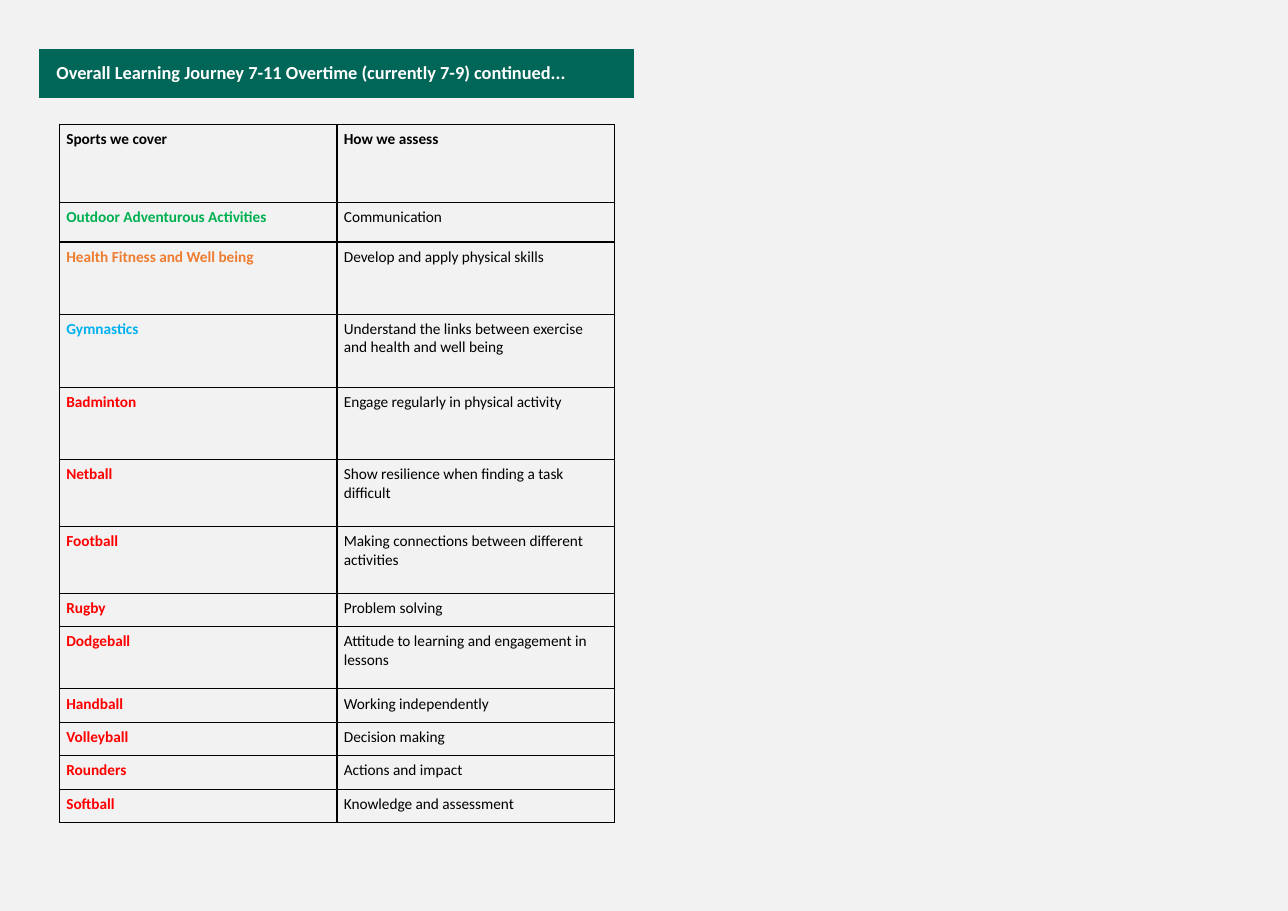
from lxml import etree
from pptx import Presentation
from pptx import util as u
from pptx.dml import color
from pptx.enum import text
from pptx.oxml import ns

GREEN, ORANGE, BLUE, RED, BLACK = "00B050", "ED7D31", "00B0F0", "FF0000", "000000"

ROWS = [
    (1.79, "Sports we cover", BLACK, "How we assess"),
    (0.92, "Outdoor Adventurous Activities ", GREEN, "Communication"),
    (1.66, "Health Fitness and Well being ", ORANGE, "Develop and apply physical skills"),
    (1.7, "Gymnastics", BLUE, "Understand the links between exercise and health and well being"),
    (1.66, "Badminton", RED, "Engage regularly in physical activity"),
    (1.54, "Netball", RED, "Show resilience when finding a task difficult "),
    (1.54, "Football", RED, "Making connections between different activities"),
    (0.77, "Rugby", RED, "Problem solving"),
    (1.43, "Dodgeball", RED, "Attitude to learning and engagement in lessons"),
    (0.77, "Handball", RED, "Working independently"),
    (0.77, "Volleyball", RED, "Decision making"),
    (0.77, "Rounders", RED, "Actions and impact"),
    (0.77, "Softball", RED, "Knowledge and assessment"),
]


def rgb(value):
    return color.RGBColor.from_string(value)


def apply(target, values):
    for name, value in values.items():
        setattr(target, name, value)


class SlideBuilder:
    font = "Calibri"
    border = u.Pt(0.86)

    def __init__(self, deck, background):
        self.page = deck.slides.add_slide(deck.slide_layouts[5])
        fill = self.page.background.fill
        fill.solid()
        fill.fore_color.rgb = rgb(background)

    def add_words(self, para, words, size, hue, bold):
        span = para.add_run()
        span.text = words
        apply(span.font, {"name": self.font, "size": u.Pt(size), "bold": bold})
        span.font.color.rgb = rgb(hue)

    def title(self, words, left, top, width, height, fill):
        box = self.page.shapes.title
        apply(box, {"left": u.Cm(left), "top": u.Cm(top),
                    "width": u.Cm(width), "height": u.Cm(height)})
        box.fill.solid()
        box.fill.fore_color.rgb = rgb(fill)
        apply(box.text_frame, {
            "word_wrap": True, "auto_size": text.MSO_AUTO_SIZE.NONE,
            "vertical_anchor": text.MSO_ANCHOR.MIDDLE,
            "margin_left": u.Cm(0.4), "margin_right": u.Cm(0.25),
            "margin_top": u.Cm(0.13), "margin_bottom": u.Cm(0.13)})
        para = box.text_frame.paragraphs[0]
        apply(para, {"alignment": text.PP_ALIGN.LEFT, "line_spacing": 0.9})
        self.add_words(para, words, 12, "FFFFFF", True)

    def outline(self, cell):
        properties = cell._tc.get_or_add_tcPr()
        for position, side in enumerate(("lnL", "lnR", "lnT", "lnB")):
            line = etree.Element(ns.qn(f"a:{side}"), w=str(self.border))
            fill = etree.SubElement(line, ns.qn("a:solidFill"))
            etree.SubElement(fill, ns.qn("a:srgbClr"), val=BLACK)
            properties.insert(position, line)

    def cell(self, cell, words, hue, bold):
        apply(cell, {"margin_left": u.Cm(0.16), "margin_right": u.Cm(0.16),
                     "margin_top": u.Cm(0.13), "margin_bottom": u.Cm(0.13)})
        cell.fill.background()
        self.outline(cell)
        self.add_words(cell.text_frame.paragraphs[0], words, 10, hue, bold)

    def table(self, rows, left, top, width):
        height = sum(row[0] for row in rows)
        frame = self.page.shapes.add_table(
            len(rows), 2, u.Cm(left), u.Cm(top), u.Cm(width), u.Cm(height))
        grid = frame.table
        apply(grid, {"first_row": False, "horz_banding": False})
        for index, (row_height, sport, hue, skill) in enumerate(rows):
            grid.rows[index].height = u.Cm(row_height)
            self.cell(grid.cell(index, 0), sport, hue, True)
            self.cell(grid.cell(index, 1), skill, BLACK, index == 0)


def main():
    deck = Presentation()
    apply(deck, {"slide_width": u.Cm(29.7), "slide_height": u.Cm(21)})
    builder = SlideBuilder(deck, "F2F2F2")
    builder.title("Overall Learning Journey 7-11 Overtime (currently 7-9) continued...",
                  0.9, 1.13, 13.72, 1.13, "006758")
    builder.table(ROWS, 1.37, 2.87, 12.8)
    deck.save("out.pptx")


if __name__ == "__main__":
    main()
